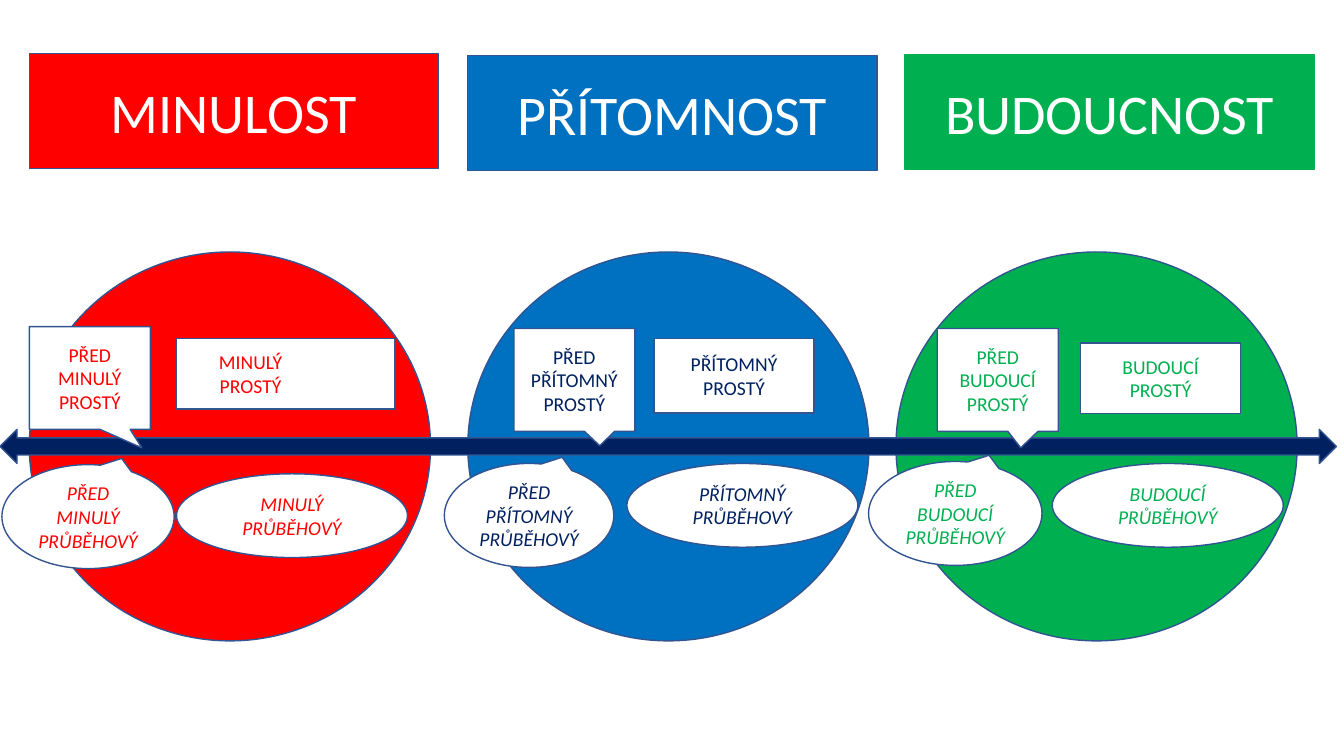
from dataclasses import dataclass

from pptx import Presentation
from pptx.dml.color import RGBColor
from pptx.enum.shapes import MSO_SHAPE
from pptx.enum.text import MSO_ANCHOR, PP_ALIGN
from pptx.util import Cm, Pt

RECTANGLE = MSO_SHAPE.RECTANGLE
OVAL = MSO_SHAPE.OVAL
CIRCLE = MSO_SHAPE.FLOWCHART_CONNECTOR
ARROW = MSO_SHAPE.LEFT_RIGHT_ARROW
BOX_CALLOUT = MSO_SHAPE.RECTANGULAR_CALLOUT
OVAL_CALLOUT = MSO_SHAPE.OVAL_CALLOUT
CENTER = PP_ALIGN.CENTER
MIDDLE = MSO_ANCHOR.MIDDLE


@dataclass(frozen=True)
class Theme:
    font: str = "Calibri"
    heading_size: int = 40
    label_size: int = 14
    white: str = "FFFFFF"
    outline: str = "325491"
    navy: str = "002060"
    red: str = "FF0000"
    blue: str = "0070C0"
    green: str = "00B050"


THEME = Theme()


@dataclass(frozen=True)
class Tense:
    """One time period; each place is left, top, width, height in cm."""
    heading: str
    adjective: str
    fill: str
    ink: str
    heading_line: str
    circle_left: float
    heading_at: tuple
    simple_at: tuple
    continuous_at: tuple
    perfect_at: tuple
    perfect_tip: tuple
    perfect_continuous_at: tuple
    first_line_right_indent: float = 0


TENSES = [
    Tense("MINULOST", "MINULÝ", THEME.red, THEME.red, THEME.outline, 0.74,
          (0.74, 1.35), (4.45, 8.53, 5.51, 1.78), (4.45, 11.94),
          (0.74, 8.23), (0.43, 0.68), (0.05, 11.71, 4.34, 2.62), 1.78),
    Tense("PŘÍTOMNOST", "PŘÍTOMNÝ", THEME.blue, THEME.navy, THEME.outline, 11.79,
          (11.79, 1.4), (16.48, 8.53, 4.04, 1.88), (15.8, 11.68),
          (12.95, 8.28), (0.21, 0.64), (11.2, 11.68, 4.27, 2.62)),
    Tense("BUDOUCNOST", "BUDOUCÍ", THEME.green, THEME.green, THEME.green, 22.58,
          (22.81, 1.37), (27.23, 8.64, 4.04, 1.78), (26.52, 11.68),
          (23.62, 8.28), (0.19, 0.66), (21.89, 11.63, 4.37, 2.62)),
]
HEADING_SIZE = (10.31, 2.9)
CIRCLE_SIZE = (10.11, 9.8)
CONTINUOUS_SIZE = (5.82, 2.11)
PERFECT_SIZE = (3.05, 2.59)
OVAL_TIP = (0.195, -0.56)


def add_figure(slide, kind, place, fill, line=THEME.outline, tip=()):
    shape = slide.shapes.add_shape(kind, *(Cm(length) for length in place))
    shape.shadow.inherit = False
    shape.fill.solid()
    shape.fill.fore_color.rgb = RGBColor.from_string(fill)
    shape.line.color.rgb = RGBColor.from_string(line)
    shape.line.width = Pt(1)
    for index, value in enumerate(tip):
        shape.adjustments[index] = value
    return shape


def add_text(shape, lines, size, color, italic=False):
    frame = shape.text_frame
    frame.word_wrap = True
    frame.vertical_anchor = MIDDLE
    for index, line in enumerate(lines):
        paragraph = frame.add_paragraph() if index else frame.paragraphs[0]
        paragraph.alignment = CENTER
        run = paragraph.add_run()
        run.text = line
        run.font.name = THEME.font
        run.font.size = Pt(size)
        run.font.italic = italic
        run.font.color.rgb = RGBColor.from_string(color)


def add_label(slide, kind, place, lines, color, italic=False, tip=()):
    shape = add_figure(slide, kind, place, THEME.white, tip=tip)
    add_text(shape, lines, THEME.label_size, color, italic)
    return shape


def add_heading(slide, tense):
    shape = add_figure(slide, RECTANGLE, tense.heading_at + HEADING_SIZE,
                       tense.fill, tense.heading_line)
    add_text(shape, [tense.heading], THEME.heading_size, THEME.white)


def add_tense_labels(slide, tense):
    simple = f"{tense.adjective} PROSTÝ"
    continuous = f"{tense.adjective} PRŮBĚHOVÝ"

    # Simple and continuous forms
    indent = tense.first_line_right_indent
    box = add_label(slide, RECTANGLE, tense.simple_at,
                    simple.split() if indent else [simple], tense.ink)
    if indent:
        properties = box.text_frame.paragraphs[0]._p.get_or_add_pPr()
        properties.set("marR", str(Cm(indent)))
    add_label(slide, OVAL, tense.continuous_at + CONTINUOUS_SIZE,
              [continuous], tense.ink, italic=True)

    # Perfect forms, pointing at the time line
    add_label(slide, BOX_CALLOUT, tense.perfect_at + PERFECT_SIZE,
              [f"PŘED {simple}"], tense.ink, tip=tense.perfect_tip)
    add_label(slide, OVAL_CALLOUT, tense.perfect_continuous_at,
              [f"PŘED {continuous}"], tense.ink, italic=True, tip=OVAL_TIP)


def main():
    presentation = Presentation()
    presentation.slide_width = Cm(33.87)
    presentation.slide_height = Cm(19.05)
    blank_layout = presentation.slide_layouts[6]
    slide = presentation.slides.add_slide(blank_layout)

    # Circles and headings of the three periods
    for tense in TENSES:
        add_figure(slide, CIRCLE, (tense.circle_left, 6.35) + CIRCLE_SIZE, tense.fill)
        add_heading(slide, tense)

    # Time line across the circles
    add_figure(slide, ARROW, (0, 10.82, 33.68, 0.86), THEME.navy)

    # Names of the tenses
    for tense in TENSES:
        add_tense_labels(slide, tense)

    presentation.save("out.pptx")


if __name__ == "__main__":
    main()
